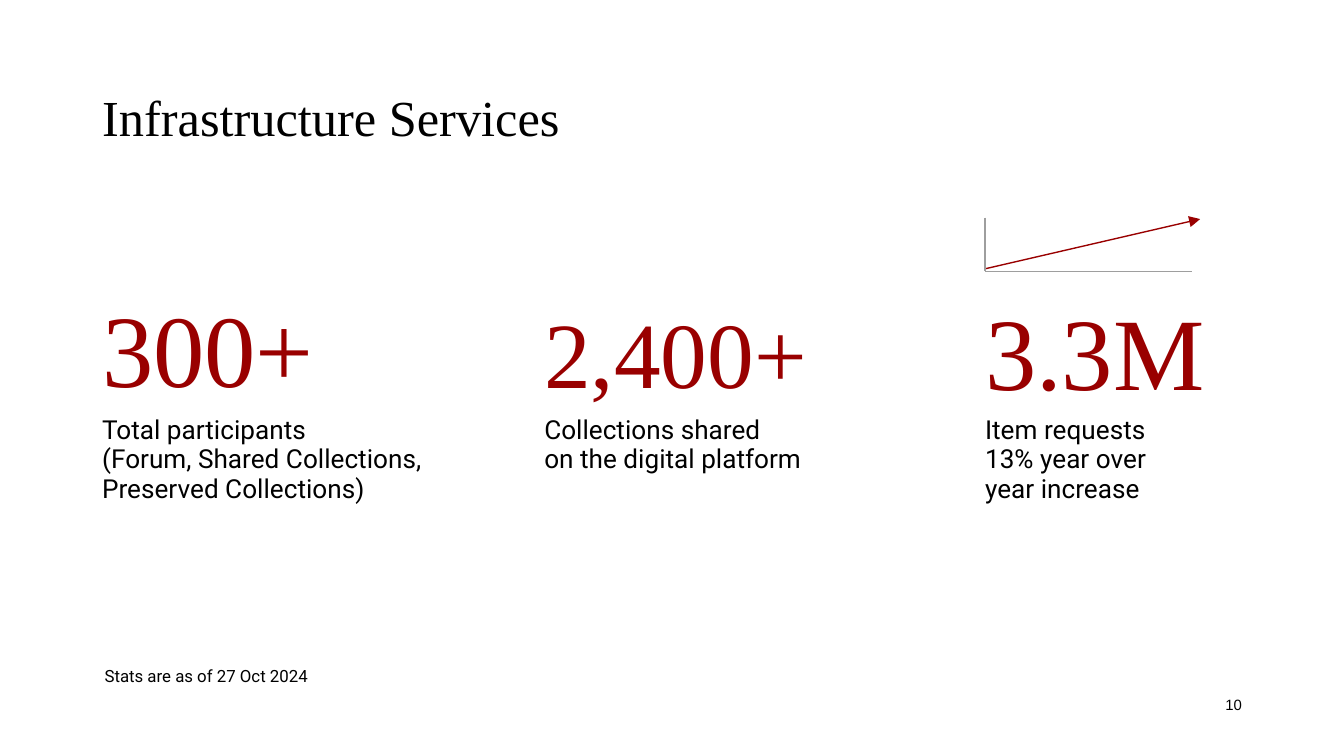
from lxml import etree
from pptx import Presentation
from pptx.dml.color import RGBColor
from pptx.enum.shapes import MSO_CONNECTOR
from pptx.enum.text import MSO_ANCHOR, PP_ALIGN
from pptx.oxml.ns import qn
from pptx.util import Inches, Pt

STRAIGHT = MSO_CONNECTOR.STRAIGHT
TOP, MIDDLE, BOTTOM = MSO_ANCHOR.TOP, MSO_ANCHOR.MIDDLE, MSO_ANCHOR.BOTTOM
LEFT, RIGHT = PP_ALIGN.LEFT, PP_ALIGN.RIGHT
COLORS = {"text": "000000", "accent": "990000", "axis": "9E9E9E"}
SERIF, SANS, PLAIN = "Times New Roman", "Roboto", "Arial"
SLIDE_WIDTH = 10
SLIDE_HEIGHT = SLIDE_WIDTH * 9 / 16

STATISTICS = [
    ((0.76, 2.27, 2.57, 0.79), "300+", 55, 0.7,
     "Total participants\v(Forum, Shared Collections, Preserved Collections)"),
    ((4.05, 2.35, 2.57, 0.7), "2,400+", 50, 0.46,
     "Collections shared\von the digital platform"),
    ((7.33, 2.22, 2.33, 0.86), "3.3M", 55, 0.56,
     "Item requests\n13% year over\vyear increase"),
]


def add_text(slide, box, text, font, size, color="text", spacing=1.0,
             anchor=TOP, align=LEFT, inset=0):
    """Add a wrapped text box whose paragraphs share one style."""
    frame = slide.shapes.add_textbox(*map(Inches, box)).text_frame
    frame.word_wrap = True
    frame.vertical_anchor = anchor
    frame.margin_left = frame.margin_right = Inches(inset)
    frame.margin_top = frame.margin_bottom = Inches(inset)
    frame.text = text
    for paragraph in frame.paragraphs:
        paragraph.alignment = align
        paragraph.line_spacing = spacing
        paragraph.font.name = font
        paragraph.font.size = Pt(size)
        paragraph.font.color.rgb = RGBColor.from_string(COLORS[color])


def add_line(shapes, start, end, color, arrow=False):
    """Add a thin straight line, with an optional arrowhead at its end."""
    connector = shapes.add_connector(STRAIGHT, *map(Inches, start + end))
    connector.line.width = Pt(0.75)
    connector.line.color.rgb = RGBColor.from_string(COLORS[color])
    properties = connector._element.spPr
    if arrow:
        line = properties.find(qn("a:ln"))
        etree.SubElement(line, qn("a:tailEnd"), type="triangle")
    etree.SubElement(properties, qn("a:effectLst"))


def add_statistic(slide, box, number, size, label_height, label):
    """Add a large number in the box, and its label below."""
    add_text(slide, box, number, SERIF, size, "accent", spacing=0.95, anchor=BOTTOM)
    add_text(slide, (box[0], 3.09, 2.57, label_height), label, SANS, 14, spacing=0.95)


def add_trend(slide, left, top, width, height):
    """Add a small pair of axes with a rising arrow."""
    shapes = slide.shapes.add_group_shape().shapes
    right, bottom = left + width, top + height
    add_line(shapes, (left, bottom - 0.02), (right, top + 0.01), "accent", arrow=True)
    add_line(shapes, (left, top), (left, bottom), "axis")
    add_line(shapes, (left, bottom), (right - 0.06, bottom), "axis")


def add_footer(slide, left, top, width):
    """Add the date note at the left and the slide number at the right."""
    add_text(slide, (left, top, 7.87, 0.35), "Stats are as of 27 Oct 2024",
             SANS, 9, inset=0.1)
    add_text(slide, (left + width - 0.6, top + 0.15, 0.6, 0.43), "10", PLAIN, 8,
             anchor=MIDDLE, align=RIGHT, inset=0.1)


def main():
    """Build the slide and save it."""
    presentation = Presentation()
    presentation.slide_width = Inches(SLIDE_WIDTH)
    presentation.slide_height = Inches(SLIDE_HEIGHT)
    slide = presentation.slides.add_slide(presentation.slide_layouts[6])
    add_text(slide, (0.76, 0.73, 8.08, 0.56), "Infrastructure Services",
             SERIF, 27, spacing=0.8)
    for statistic in STATISTICS:
        add_statistic(slide, *statistic)
    add_trend(slide, 7.33, 1.62, 1.6, 0.4)
    add_footer(slide, 0.68, 4.88, 8.66)
    presentation.save("out.pptx")


if __name__ == "__main__":
    main()
